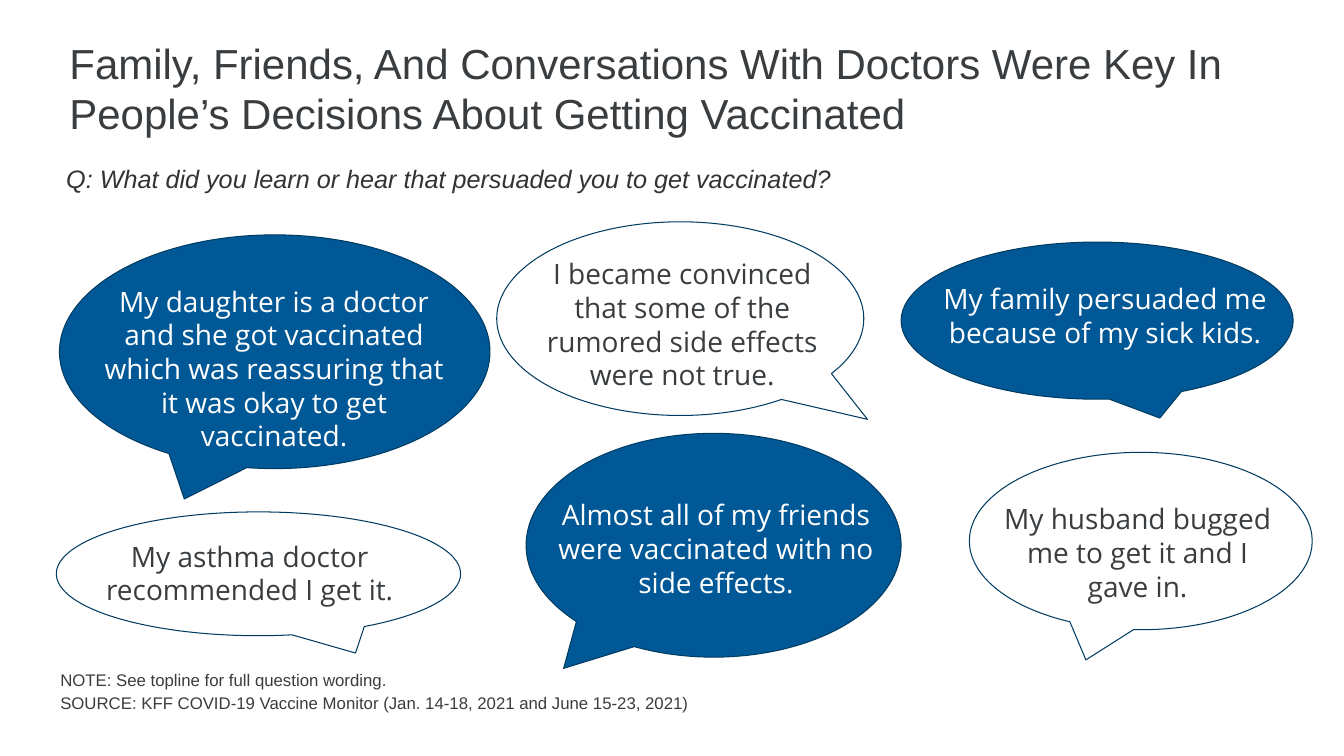
from pptx import Presentation
from pptx.dml.color import RGBColor
from pptx.enum.shapes import MSO_SHAPE
from pptx.enum.text import PP_ALIGN
from pptx.util import Cm, Pt

BLUE, NAVY, WHITE, GREY, DARK = "005996", "003B62", "FFFFFF", "393D40", "333333"


def color(code):
    return RGBColor.from_string(code)


class QuoteSlide:
    """Holds the current page and the shared style of its elements."""

    heading_font = "Arial"
    quote_font = "Open Sans"

    def __init__(self, page):
        self.page = page

    def text(self, place, lines, size, ink=GREY, font=heading_font,
             align=PP_ALIGN.LEFT, italic=False, gap=0):
        box = self.page.shapes.add_textbox(*map(Cm, place))
        frame = box.text_frame
        frame.word_wrap = True
        frame.text = "\n".join(lines)
        for index, para in enumerate(frame.paragraphs):
            para.alignment = align
            if index:
                para.space_before = Pt(gap)
            for span in para.runs:
                span.font.name = font
                span.font.size = Pt(size)
                span.font.italic = italic
                span.font.color.rgb = color(ink)

    def bubble(self, place, tail, filled):
        """Draw a speech bubble; tail is the tip's offset from its centre."""
        shape = self.page.shapes.add_shape(MSO_SHAPE.OVAL_CALLOUT, *map(Cm, place))
        shape.adjustments[0], shape.adjustments[1] = tail
        shape.shadow.inherit = False
        shape.line.color.rgb = color(NAVY)
        shape.line.width = Pt(0.75)
        if filled:
            shape.fill.solid()
            shape.fill.fore_color.rgb = color(BLUE)
        else:
            shape.fill.background()

    def quote(self, words, text_place, bubble_place, tail, filled):
        self.bubble(bubble_place, tail, filled)
        self.text(text_place, [words], 20, WHITE if filled else GREY,
                  self.quote_font, PP_ALIGN.CENTER)


QUOTES = [
    ("My daughter is a doctor and she got vaccinated which was reassuring "
     "that it was okay to get vaccinated.",
     (2.21, 7.04, 9.4, 4.52), (1.5, 5.92, 10.85, 5.89), (-0.21, 0.63), True),
    ("I became convinced that some of the rumored side effects were not true.",
     (13.26, 6.35, 7.87, 3.68), (12.52, 5.59, 9.25, 4.88), (0.51, 0.52), False),
    ("My family persuaded me because of my sick kids.",
     (23.34, 6.98, 9.02, 1.96), (22.71, 6.1, 9.88, 3.96), (0.16, 0.62), True),
    ("My asthma doctor recommended I get it.",
     (1.9, 13.46, 8.79, 1.96), (1.42, 12.9, 10.19, 3.12), (0.24, 0.64), False),
    ("Almost all of my friends were vaccinated with no side effects.",
     (13.74, 12.42, 8.61, 2.82), (13.26, 10.92, 9.45, 5.64), (-0.4, 0.55), True),
    ("My husband bugged me to get it and I gave in.",
     (25.04, 12.52, 7.26, 2.82), (24.43, 11.4, 8.64, 4.47), (-0.16, 0.67), False),
]


def main():
    deck = Presentation()
    deck.slide_width, deck.slide_height = Cm(33.87), Cm(19.05)
    page = QuoteSlide(deck.slides.add_slide(deck.slide_layouts[6]))
    page.text((1.5, 0.81, 31.9, 2.34),
              ["Family, Friends, And Conversations With Doctors Were Key In "
               "People’s Decisions About Getting Vaccinated"], 30)
    page.text((1.42, 3.99, 20.02, 1.02),
              ["Q: What did you learn or hear that persuaded you to get vaccinated?"],
              18, DARK, italic=True)
    for entry in QUOTES:
        page.quote(*entry)
    page.text((1.27, 16.74, 25.5, 1.9),
              ["NOTE: See topline for full question wording.",
               "SOURCE: KFF COVID-19 Vaccine Monitor (Jan. 14-18, 2021 and June 15-23, 2021)"],
              12, gap=2.4)
    deck.save("out.pptx")


if __name__ == "__main__":
    main()
